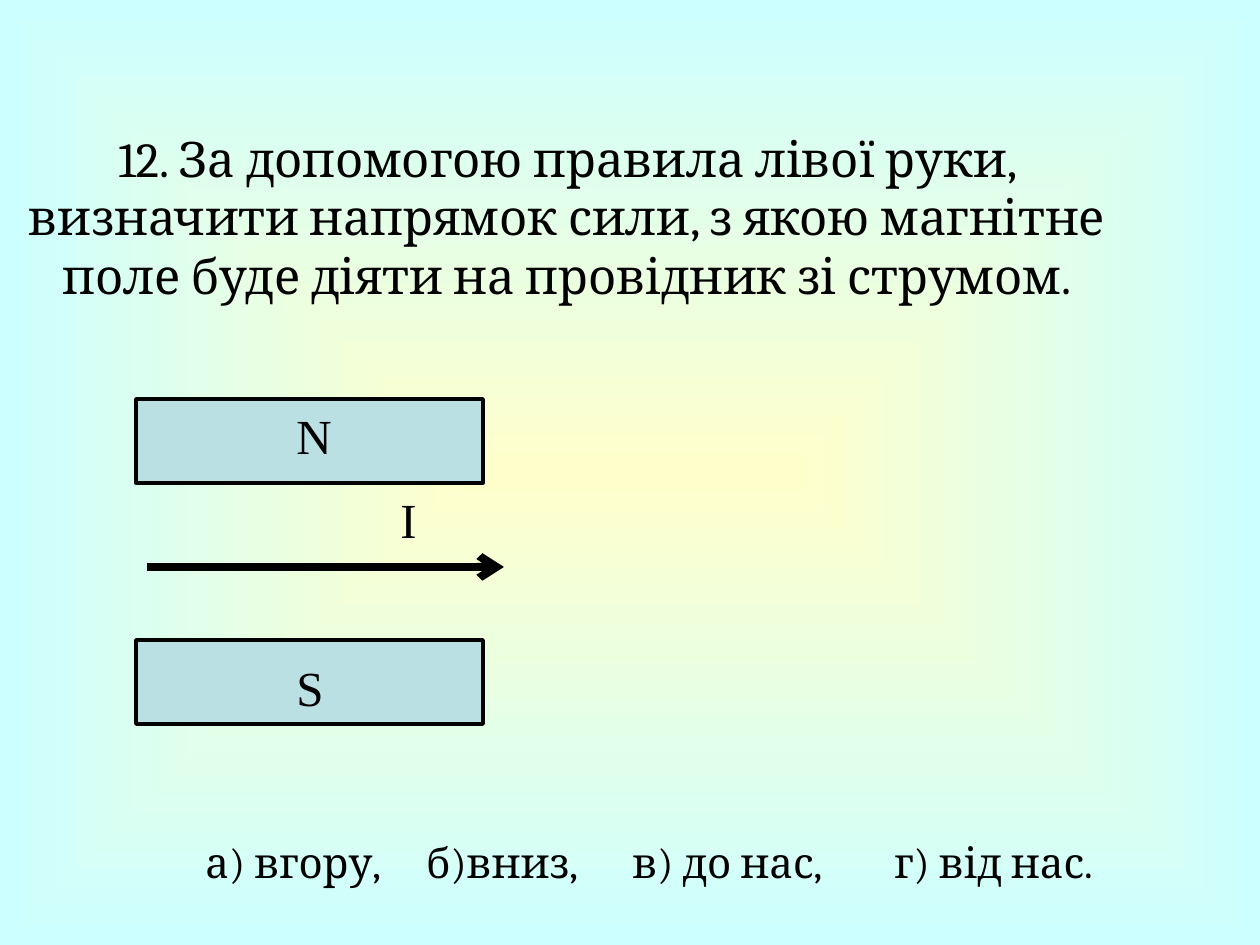
from lxml import etree
from pptx import Presentation
from pptx.dml.color import RGBColor
from pptx.enum.shapes import MSO_CONNECTOR, MSO_SHAPE
from pptx.enum.text import PP_ALIGN
from pptx.oxml.ns import qn
from pptx.util import Pt

PX = 7257.14
RECT = MSO_SHAPE.RECTANGLE
STRAIGHT = MSO_CONNECTOR.STRAIGHT
LEFT = PP_ALIGN.LEFT
CENTER = PP_ALIGN.CENTER

BLACK = RGBColor(0x00, 0x00, 0x00)
MAGNET = RGBColor(0xBB, 0xE0, 0xE3)
CREAM = RGBColor(0xFF, 0xFF, 0xCC)
AQUA = RGBColor(0xCC, 0xFF, 0xFF)

QUESTION = ("12. За допомогою правила лівої руки, визначити напрямок сили, "
            "з якою магнітне поле буде діяти на провідник зі струмом.")
ANSWERS = ["а) вгору,", "б)вниз,", "в) до нас,", "г) від нас."]
ANSWER_TABS = [221, 427, 689]


def px(n):
    return round(n * PX)


def set_background(slide):
    fill = slide.background.fill
    fill.gradient()
    for stop, color in zip(fill.gradient_stops, (CREAM, AQUA)):
        stop.color.rgb = color
    grad = slide.element.find(".//" + qn("a:gradFill"))
    grad.remove(grad.find(qn("a:lin")))
    shade = etree.SubElement(grad, qn("a:path"), {"path": "shape"})
    etree.SubElement(shade, qn("a:fillToRect"),
                     {side: "50000" for side in "ltrb"})


def add_text(slide, x, y, w, h, text, size, font, align=LEFT):
    tf = slide.shapes.add_textbox(px(x), px(y), px(w), px(h)).text_frame
    tf.word_wrap = True
    tf.text = text
    p = tf.paragraphs[0]
    p.alignment = align
    for r in p.runs:
        r.font.size = Pt(size)
        r.font.name = font
        r.font.color.rgb = BLACK
    return p


def add_tabs(p, stops):
    tabs = etree.SubElement(p._p.get_or_add_pPr(), qn("a:tabLst"))
    for stop in stops:
        etree.SubElement(tabs, qn("a:tab"), {"pos": str(px(stop)), "algn": "l"})


def add_magnet(slide, x, y, w, h):
    sp = slide.shapes.add_shape(RECT, px(x), px(y), px(w), px(h))
    sp.shadow.inherit = False
    sp.fill.solid()
    sp.fill.fore_color.rgb = MAGNET
    sp.line.color.rgb = BLACK
    sp.line.width = Pt(2)


def add_arrow(slide, x1, y1, x2, y2):
    cxn = slide.shapes.add_connector(STRAIGHT, px(x1), px(y1), px(x2), px(y2))
    cxn.line.color.rgb = BLACK
    cxn.line.width = Pt(4.5)
    etree.SubElement(cxn.line._get_or_add_ln(), qn("a:tailEnd"),
                     {"type": "arrow"})
    etree.SubElement(cxn._element.spPr, qn("a:effectLst"))


def main():
    prs = Presentation()
    prs.slide_width = px(1260)
    prs.slide_height = px(945)
    slide = prs.slides.add_slide(prs.slide_layouts[6])
    set_background(slide)

    add_text(slide, 0, 122, 1134, 187, QUESTION, 28, "Cambria", CENTER)
    answers = add_text(slide, 193, 830, 1002, 63, "\t".join(ANSWERS),
                       24, "Cambria")
    add_tabs(answers, ANSWER_TABS)

    for y in (399, 640):
        add_magnet(slide, 136, y, 347, 84)
    add_arrow(slide, 147, 567, 504, 567)
    for label, x, y in (("І", 388, 483), ("N", 284, 399), ("S", 284, 651)):
        add_text(slide, x, y, 42, 72, label, 28, "Times New Roman")

    prs.save("out.pptx")


if __name__ == "__main__":
    main()
